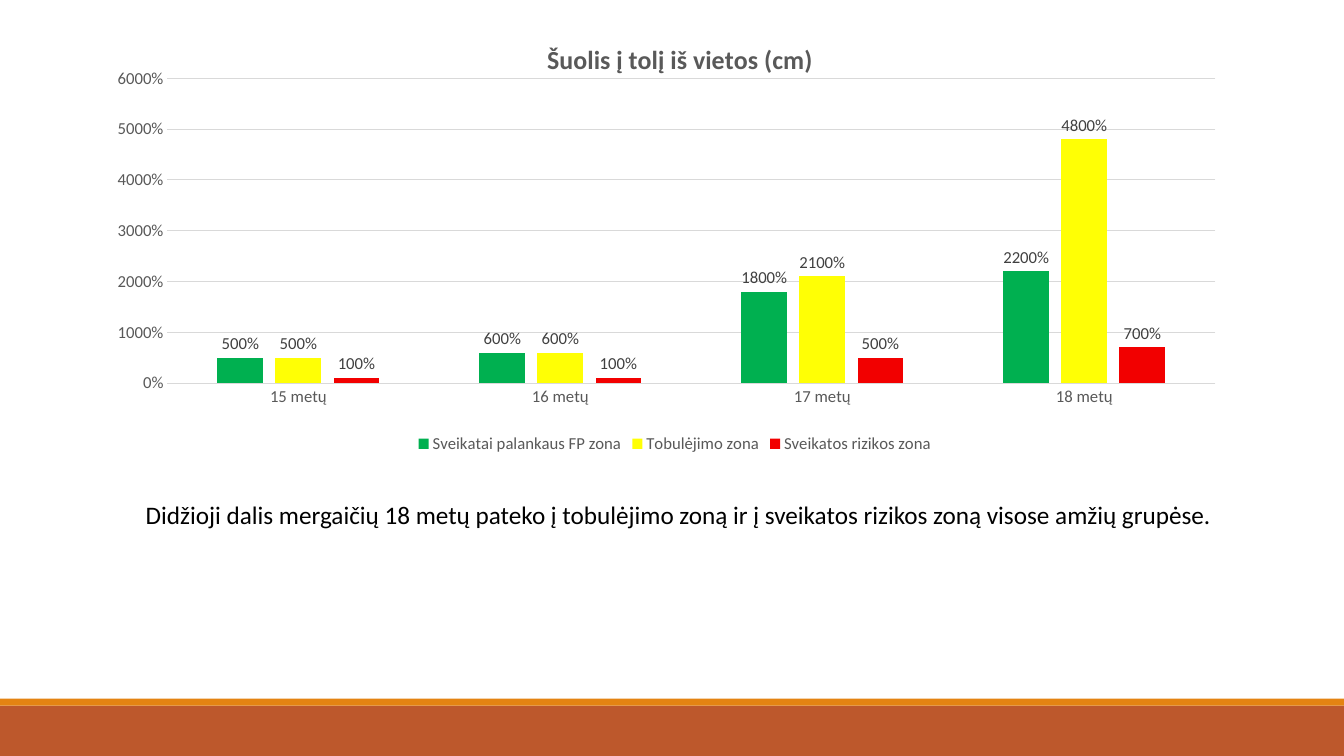
from lxml import etree
from pptx import Presentation
from pptx import util as u
from pptx.chart import data as chart_data
from pptx.dml import color
from pptx.enum import chart as charts, shapes, text
from pptx.oxml import ns

FONT = "Calibri"
GREY = "595959"
GRID = "D9D9D9"
AGES = ["15 metų", "16 metų", "17 metų", "18 metų"]
ZONES = [
    ("Sveikatai palankaus FP zona", [5, 6, 18, 22], "00B050"),
    ("Tobulėjimo zona", [5, 6, 21, 48], "FFFF05"),
    ("Sveikatos rizikos zona", [1, 1, 5, 7], "F20000"),
]


def rgb(value):
    """Return the colour for a hex string."""
    return color.RGBColor.from_string(value)


def style_font(font, size, colour, bold=False):
    """Set the face, size, colour and weight of a font."""
    font.name = FONT
    font.size = u.Pt(size)
    font.bold = bold
    font.color.rgb = rgb(colour)


def style_line(line, colour):
    """Give a chart line its colour and width."""
    line.color.rgb = rgb(colour)
    line.width = u.Pt(0.75)


def set_layout(element, index, settings):
    """Place a chart part by hand, in fractions of the chart."""
    for old_layout in element.findall(ns.qn("c:layout")):
        element.remove(old_layout)
    layout = etree.Element(ns.qn("c:layout"))
    manual = etree.SubElement(layout, ns.qn("c:manualLayout"))
    for name, value in settings.items():
        etree.SubElement(manual, ns.qn(f"c:{name}")).set("val", str(value))
    element.insert(index, layout)


def add_footer(slide, left, top, width, height):
    """Draw the footer band with its thin accent strip on top."""
    strip = 5
    bands = [(top + strip, height - strip, "BD582C"), (top, strip, "E48312")]
    for band_top, band_height, colour in bands:
        band = slide.shapes.add_shape(
            shapes.MSO_SHAPE.RECTANGLE,
            u.Pt(left), u.Pt(band_top), u.Pt(width), u.Pt(band_height))
        band.shadow.inherit = False
        band.fill.solid()
        band.fill.fore_color.rgb = rgb(colour)
        band.line.fill.background()


def style_axes(chart):
    """Format the category and value axes."""
    for axis in (chart.category_axis, chart.value_axis):
        axis.major_tick_mark = charts.XL_TICK_MARK.NONE
        axis.minor_tick_mark = charts.XL_TICK_MARK.NONE
        style_font(axis.tick_labels.font, 12, GREY)
    style_line(chart.category_axis.format.line, GRID)
    values = chart.value_axis
    values.minimum_scale, values.maximum_scale, values.major_unit = 0, 60, 10
    values.format.line.fill.background()
    values.has_major_gridlines = True
    style_line(values.major_gridlines.format.line, GRID)
    values.tick_labels.number_format = "0%"
    values.tick_labels.number_format_is_linked = False


def style_series(plot):
    """Colour the columns and label them with their values."""
    plot.gap_width = 219
    plot.overlap = -27
    plot.vary_by_categories = False
    for series, (_, _, colour) in zip(plot.series, ZONES):
        series.format.fill.solid()
        series.format.fill.fore_color.rgb = rgb(colour)
        labels = series.data_labels
        labels.show_value = True
        labels.position = charts.XL_LABEL_POSITION.OUTSIDE_END
        labels.number_format = "0%"
        labels.number_format_is_linked = False
        style_font(labels.font, 12, "404040")


def add_jump_chart(slide, left, top, width, height):
    """Add the long jump column chart with its title and legend."""
    jump_data = chart_data.CategoryChartData(number_format="0%")
    jump_data.categories = AGES
    for name, values, _ in ZONES:
        jump_data.add_series(name, values)
    chart = slide.shapes.add_chart(
        charts.XL_CHART_TYPE.COLUMN_CLUSTERED,
        u.Pt(left), u.Pt(top), u.Pt(width), u.Pt(height), jump_data).chart
    style_font(chart.font, 10, "000000")

    chart.has_title = True
    title = chart.chart_title
    title.include_in_layout = False
    title.text_frame.text = "Šuolis į tolį iš vietos (cm)"
    style_font(title.text_frame.paragraphs[0].runs[0].font, 18.6, GREY, True)
    set_layout(title.element, 1,
               {"xMode": "edge", "yMode": "edge", "x": 0.38, "y": 0.05})

    chart.has_legend = True
    chart.legend.position = charts.XL_LEGEND_POSITION.BOTTOM
    chart.legend.include_in_layout = False
    style_font(chart.legend.font, 12, GREY)

    style_axes(chart)
    style_series(chart.plots[0])
    plot_area = chart.element.find(f".//{ns.qn('c:plotArea')}")
    set_layout(plot_area, 0,
               {"layoutTarget": "inner", "xMode": "edge", "yMode": "edge",
                "x": 0.04, "y": 0.145, "w": 0.95, "h": 0.687})


def add_conclusion(slide, left, top, width, height):
    """Add the concluding sentence under the chart."""
    box = slide.shapes.add_textbox(
        u.Pt(left), u.Pt(top), u.Pt(width), u.Pt(height))
    frame = box.text_frame
    frame.word_wrap = True
    frame.auto_size = text.MSO_AUTO_SIZE.SHAPE_TO_FIT_TEXT
    frame.text = ("Didžioji dalis mergaičių 18 metų pateko į tobulėjimo zoną "
                  "ir į sveikatos rizikos zoną visose amžių grupėse.")
    style_font(frame.paragraphs[0].runs[0].font, 18, "000000")


def main():
    """Build the slide and save it."""
    presentation = Presentation()
    presentation.slide_width = u.Pt(960)
    presentation.slide_height = u.Pt(540)
    slide = presentation.slides.add_slide(presentation.slide_layouts[6])
    add_footer(slide, 0, 499, 960, 41)
    add_jump_chart(slide, 84, 10, 792, 317)
    add_conclusion(slide, 97, 353, 819, 29)
    presentation.save("out.pptx")


if __name__ == "__main__":
    main()
